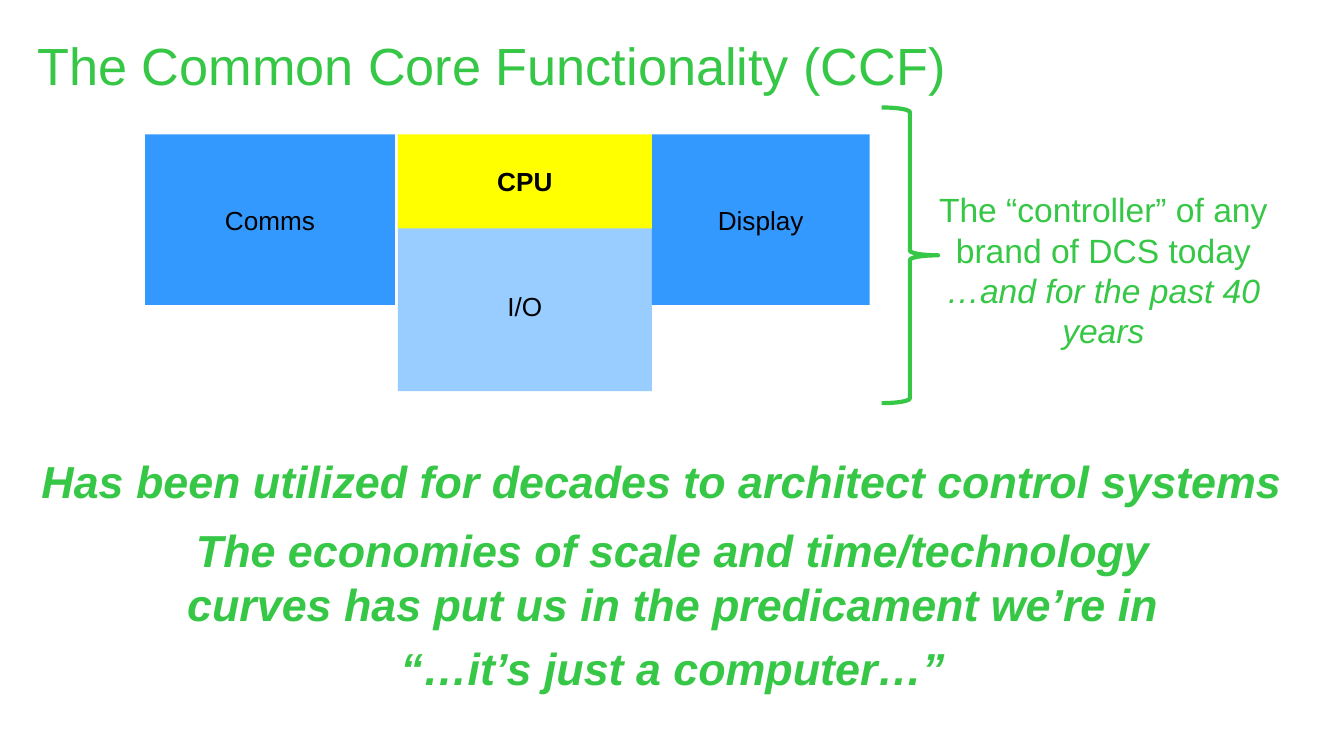
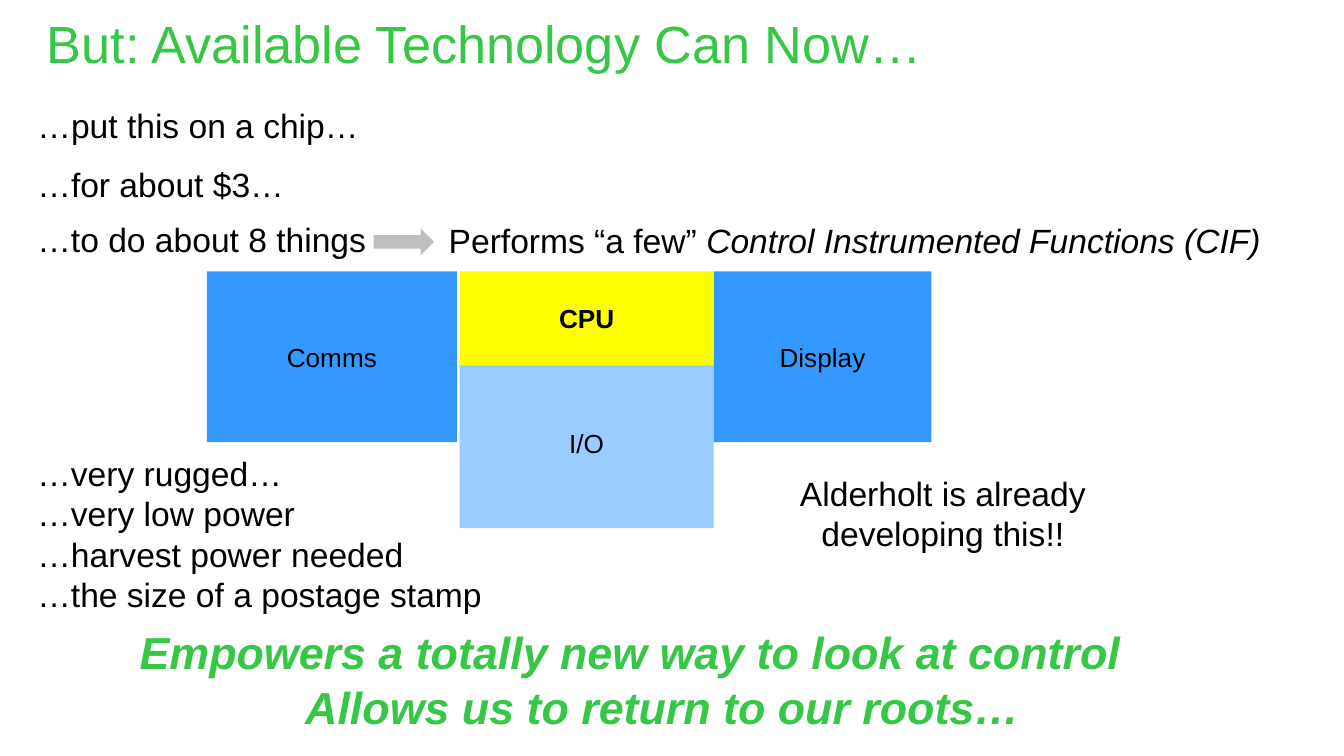
from pptx import Presentation
from pptx.dml.color import RGBColor
from pptx.enum.shapes import MSO_SHAPE as Shape
from pptx.enum.text import MSO_ANCHOR as Anchor, MSO_AUTO_SIZE as AutoSize, PP_ALIGN as Align
from pptx.util import Emu, Pt

EMU_PER_PX = 9144  # 100 px to the inch
SLIDE_WIDTH = 1000
FONT = "Arial"
GREEN, BLACK, GREY = "36C746", "000000", "BFBFBF"
BLUE, LIGHT_BLUE, YELLOW = "3399FF", "99CCFF", "FFFF00"

TITLE = {"size": Pt(28), "color": GREEN}
BODY = {"size": Pt(18), "color": BLACK}
BRACE_NOTE = {"size": Pt(18), "color": GREEN}
BLOCK_LABEL = {"size": Pt(14), "color": BLACK}
STATEMENT = {"size": Pt(24), "color": GREEN, "bold": True, "italic": True}


def px(value):
    return Emu(value * EMU_PER_PX)


def rgb(color):
    return RGBColor.from_string(color)


def format_font(font, style):
    font.name = FONT
    for key, value in style.items():
        if key == "color":
            font.color.rgb = rgb(value)
        else:
            setattr(font, key, value)


def write_text(frame, paragraphs, style, align):
    """Fill a frame; each paragraph is a list of (text, extra format) runs."""
    for index, runs in enumerate(paragraphs):
        paragraph = frame.paragraphs[0] if index == 0 else frame.add_paragraph()
        paragraph.alignment = align
        for text, extra in runs:
            run = paragraph.add_run()
            run.text = text
            format_font(run.font, style | extra)


def set_margins(frame, margin):
    for side in ("left", "top", "right", "bottom"):
        setattr(frame, f"margin_{side}", px(margin))


def add_text(shapes, box, paragraphs, style, align=Align.LEFT, wrap=True):
    """Add a text box; a plain string stands for a paragraph of one run."""
    text_box = shapes.add_textbox(*map(px, box))
    frame = text_box.text_frame
    frame.word_wrap = wrap
    frame.auto_size = AutoSize.SHAPE_TO_FIT_TEXT
    paragraphs = [[(item, {})] if isinstance(item, str) else item for item in paragraphs]
    write_text(frame, paragraphs, style, align)
    return text_box


def add_title(slide, box, text):
    title = add_text(slide.shapes, box, [text], TITLE)
    set_margins(title.text_frame, 0)


def add_shape(shapes, kind, box, fill=None, line=None):
    shape = shapes.add_shape(kind, *map(px, box))
    shape.shadow.inherit = False
    if fill:
        shape.fill.solid()
        shape.fill.fore_color.rgb = rgb(fill)
    else:
        shape.fill.background()
    if line:
        shape.line.color.rgb = rgb(line)
        shape.line.width = Pt(2.25)
    else:
        shape.line.fill.background()
    return shape


def add_controller(slide, left, top):
    """Draw the blocks of a controller, the CPU overlapping the I/O."""
    shapes = slide.shapes.add_group_shape().shapes
    blocks = [
        ("I/O", (188, 64, 189, 127), LIGHT_BLUE, {}),
        ("Display", (377, 0, 162, 127), BLUE, {}),
        ("CPU", (188, 0, 189, 70), YELLOW, {"bold": True}),
        ("Comms", (0, 0, 186, 127), BLUE, {}),
    ]
    for label, (x, y, width, height), fill, extra in blocks:
        block = add_shape(shapes, Shape.RECTANGLE, (left + x, top + y, width, height), fill)
        frame = block.text_frame
        frame.vertical_anchor = Anchor.MIDDLE
        set_margins(frame, 4)
        write_text(frame, [[(label, extra)]], BLOCK_LABEL, Align.CENTER)


def add_brace_note(slide, left, top):
    shapes = slide.shapes.add_group_shape().shapes
    add_shape(shapes, Shape.RIGHT_BRACE, (left, top, 42, 220), line=GREEN)
    add_text(
        shapes,
        (left + 27, top + 56, 276, 131),
        [
            "The “controller” of any brand of DCS today",
            [("…and for the past 40 years", {"italic": True})],
        ],
        BRACE_NOTE,
        Align.CENTER,
    )


def build_core_slide(slide):
    shapes = slide.shapes
    add_title(slide, (28, 25, 944, 47), "The Common Core Functionality (CCF)")
    add_controller(slide, 108, 100)
    add_text(shapes, (21, 333, 951, 50),
             ["Has been utilized for decades to architect control systems"],
             STATEMENT, wrap=False)
    add_brace_note(slide, 656, 80)
    for top, height, text in (
        (384, 91, "The economies of scale and time/technology curves "
                  "has put us in the predicament we’re in"),
        (472, 50, "“…it’s just a computer…”"),
    ):
        add_text(shapes, (82, top, 837, height), [text], STATEMENT, Align.CENTER)


def build_technology_slide(slide):
    shapes = slide.shapes
    add_title(slide, (35, 8, 906, 49), "But: Available Technology Can Now…")
    add_controller(slide, 154, 202)
    for top, width, height, lines in (
        (73, 268, 40, ["…put this on a chip…"]),
        (117, 212, 40, ["…for about $3…"]),
        (158, 267, 40, ["…to do about 8 things"]),
        (332, 354, 131, ["…very rugged…", "…very low power",
                         "…harvest power needed", "…the size of a postage stamp"]),
    ):
        add_text(shapes, (18, top, width, height), lines, BODY, wrap=False)
    add_shape(shapes, Shape.RIGHT_ARROW, (278, 170, 45, 20), GREY)
    functions = [("Performs “a few” ", {}),
                 ("Control Instrumented Functions (CIF)", {"italic": True})]
    add_text(shapes, (324, 159, 639, 40), [functions], BODY, wrap=False)
    add_text(shapes, (532, 347, 339, 101), ["Alderholt is already developing this!!"],
             BODY, Align.CENTER)
    add_text(shapes, (94, 460, 762, 50), ["Empowers a totally new way to look at control"],
             STATEMENT, wrap=False)
    add_text(shapes, (61, 501, 873, 50), ["Allows us to return to our roots… "],
             STATEMENT, Align.CENTER)


def main():
    presentation = Presentation()
    presentation.slide_width = px(SLIDE_WIDTH)
    presentation.slide_height = Emu(px(SLIDE_WIDTH) * 9 // 16)
    blank = presentation.slide_layouts[6]
    for build in (build_core_slide, build_technology_slide):
        build(presentation.slides.add_slide(blank))
    presentation.save("out.pptx")


if __name__ == "__main__":
    main()
